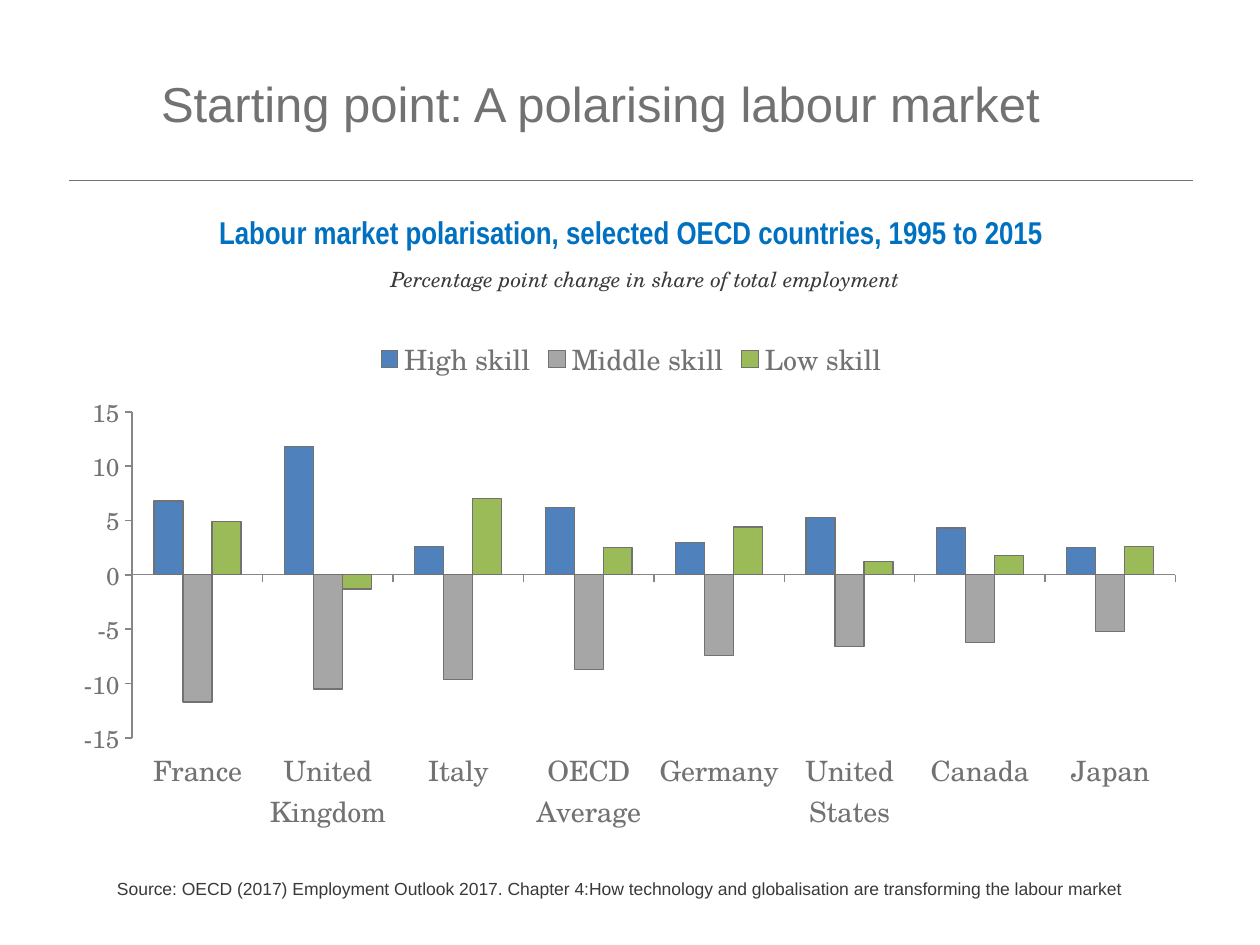
from dataclasses import dataclass

from lxml import etree
from pptx import Presentation
from pptx.chart.data import CategoryChartData
from pptx.dml.color import RGBColor
from pptx.enum.chart import (XL_CHART_TYPE, XL_LEGEND_POSITION, XL_TICK_LABEL_POSITION,
                             XL_TICK_MARK)
from pptx.enum.shapes import MSO_CONNECTOR
from pptx.enum.text import MSO_ANCHOR, PP_ALIGN
from pptx.oxml import parse_xml
from pptx.oxml.ns import nsdecls, qn
from pptx.util import Inches, Pt

CLUSTERED = XL_CHART_TYPE.COLUMN_CLUSTERED
LEGEND_TOP = XL_LEGEND_POSITION.TOP
LABELS_LOW = XL_TICK_LABEL_POSITION.LOW
TICK_OUTSIDE = XL_TICK_MARK.OUTSIDE
TICK_NONE = XL_TICK_MARK.NONE
STRAIGHT = MSO_CONNECTOR.STRAIGHT
MIDDLE, TOP = MSO_ANCHOR.MIDDLE, MSO_ANCHOR.TOP
LEFT, CENTER = PP_ALIGN.LEFT, PP_ALIGN.CENTER

GREY = RGBColor(0x72, 0x72, 0x72)
DARK_GREY = RGBColor(0x39, 0x39, 0x39)
AXIS_GREY = RGBColor(0x86, 0x86, 0x86)
HEADING_BLUE = RGBColor(0x00, 0x70, 0xC0)
HIGH_BLUE = RGBColor(0x4F, 0x81, 0xBD)
MIDDLE_GREY = RGBColor(0xA6, 0xA6, 0xA6)
LOW_GREEN = RGBColor(0x9B, 0xBB, 0x59)

SANS, NARROW, SERIF = "Arial", "Arial Narrow", "TeX Gyre Schola"

COLUMNS, ROWS = 100, 75
CELL = Inches(0.1)


@dataclass(frozen=True)
class Area:
    """A rectangle in grid columns and rows."""
    column: float
    row: float
    columns: float
    rows: float

    def box(self) -> tuple:
        return tuple(round(CELL * n) for n in (self.column, self.row, self.columns, self.rows))


@dataclass(frozen=True)
class Label:
    text: str
    area: Area
    font: str
    size: float
    color: RGBColor
    align: PP_ALIGN = CENTER
    anchor: MSO_ANCHOR = TOP
    bold: bool = False
    italic: bool = False


@dataclass(frozen=True)
class Skill:
    name: str
    color: RGBColor
    values: tuple


LABELS = (
    Label("Starting point: A polarising labour market", Area(11.8, 2.6, 88.2, 11.2),
          SANS, 28, GREY, LEFT, MIDDLE),
    Label("Labour market polarisation, selected OECD countries, 1995 to 2015",
          Area(3.3, 16.4, 93.6, 4), NARROW, 18, HEADING_BLUE, bold=True),
    Label("Percentage point change in share of total employment",
          Area(10.8, 20.7, 80.8, 3), SERIF, 12, DARK_GREY, italic=True),
    Label("Source: OECD (2017) Employment Outlook 2017. Chapter 4:How technology and "
          "globalisation are transforming the labour market",
          Area(8.3, 69.2, 83.5, 2.7), SANS, 10, DARK_GREY, LEFT),
)
RULE = Area(5.5, 14.3, 89.2, 0)
CHART = Area(5.1, 25.7, 90, 41.1)
PLOT_SHARES = {"x": 0.06, "y": 0.17, "w": 0.92, "h": 0.63}

COUNTRIES = ("France", "United Kingdom", "Italy", "OECD Average", "Germany",
             "United States", "Canada", "Japan")
SKILLS = (
    Skill("High skill", HIGH_BLUE, (6.8, 11.8, 2.6, 6.2, 3, 5.3, 4.3, 2.5)),
    Skill("Middle skill", MIDDLE_GREY, (-11.7, -10.5, -9.6, -8.7, -7.4, -6.6, -6.2, -5.2)),
    Skill("Low skill", LOW_GREEN, (4.9, -1.3, 7, 2.5, 4.4, 1.2, 1.8, 2.6)),
)


def style_font(font, name: str, size: float, color: RGBColor) -> None:
    font.name = name
    font.size = Pt(size)
    font.color.rgb = color


def draw_label(slide, label: Label) -> None:
    frame = slide.shapes.add_textbox(*label.area.box()).text_frame
    frame.word_wrap = True
    frame.vertical_anchor = label.anchor
    paragraph = frame.paragraphs[0]
    paragraph.alignment = label.align
    run = paragraph.add_run()
    run.text = label.text
    style_font(run.font, label.font, label.size, label.color)
    run.font.bold = label.bold
    run.font.italic = label.italic


def draw_rule(slide, area: Area) -> None:
    left, top, width, height = area.box()
    rule = slide.shapes.add_connector(STRAIGHT, left, top, left + width, top + height)
    rule.line.color.rgb = GREY
    rule.line.width = Pt(0.5)
    etree.SubElement(rule._element.spPr, qn("a:effectLst"))


def style_axis(axis, size: float, line_width: float) -> None:
    axis.has_major_gridlines = False
    axis.major_tick_mark = TICK_OUTSIDE
    axis.minor_tick_mark = TICK_NONE
    axis.format.line.color.rgb = AXIS_GREY
    axis.format.line.width = Pt(line_width)
    style_font(axis.tick_labels.font, SERIF, size, GREY)


def place_plot(chart, shares: dict) -> None:
    """Fix the inner plot area as shares of the chart's size."""
    plot_area = chart._chartSpace.chart.plotArea
    for layout in plot_area.findall(qn("c:layout")):
        plot_area.remove(layout)
    modes = "".join(f'<c:{side}Mode val="edge"/>' for side in "xy")
    lengths = "".join(f'<c:{key} val="{share}"/>' for key, share in shares.items())
    plot_area.insert(0, parse_xml(
        f'<c:layout {nsdecls("c")}><c:manualLayout><c:layoutTarget val="inner"/>'
        f'{modes}{lengths}</c:manualLayout></c:layout>'))


def draw_chart(slide, area: Area) -> None:
    data = CategoryChartData()
    data.categories = COUNTRIES
    for skill in SKILLS:
        data.add_series(skill.name, skill.values)
    chart = slide.shapes.add_chart(CLUSTERED, *area.box(), data).chart
    style_font(chart.font, SERIF, 16, GREY)
    chart.has_title = False
    chart.has_legend = True
    chart.legend.position = LEGEND_TOP
    chart.legend.include_in_layout = False
    style_font(chart.legend.font, SERIF, 16, GREY)

    plot = chart.plots[0]
    plot.gap_width = 150
    plot.overlap = 0
    plot.vary_by_categories = False
    for series, skill in zip(plot.series, SKILLS):
        series.invert_if_negative = False
        series.format.fill.solid()
        series.format.fill.fore_color.rgb = skill.color
        series.format.line.color.rgb = GREY
        series.format.line.width = Pt(0.75)

    style_axis(chart.category_axis, 16, 0.75)
    chart.category_axis.tick_label_position = LABELS_LOW
    style_axis(chart.value_axis, 14, 1)
    chart.value_axis.minimum_scale = -15
    chart.value_axis.maximum_scale = 15
    chart.value_axis.major_unit = 5
    place_plot(chart, PLOT_SHARES)


def main() -> None:
    presentation = Presentation()
    presentation.slide_width = CELL * COLUMNS
    presentation.slide_height = CELL * ROWS
    slide = presentation.slides.add_slide(presentation.slide_layouts[6])
    draw_rule(slide, RULE)
    draw_chart(slide, CHART)
    for label in LABELS:
        draw_label(slide, label)
    presentation.save("out.pptx")


if __name__ == "__main__":
    main()
